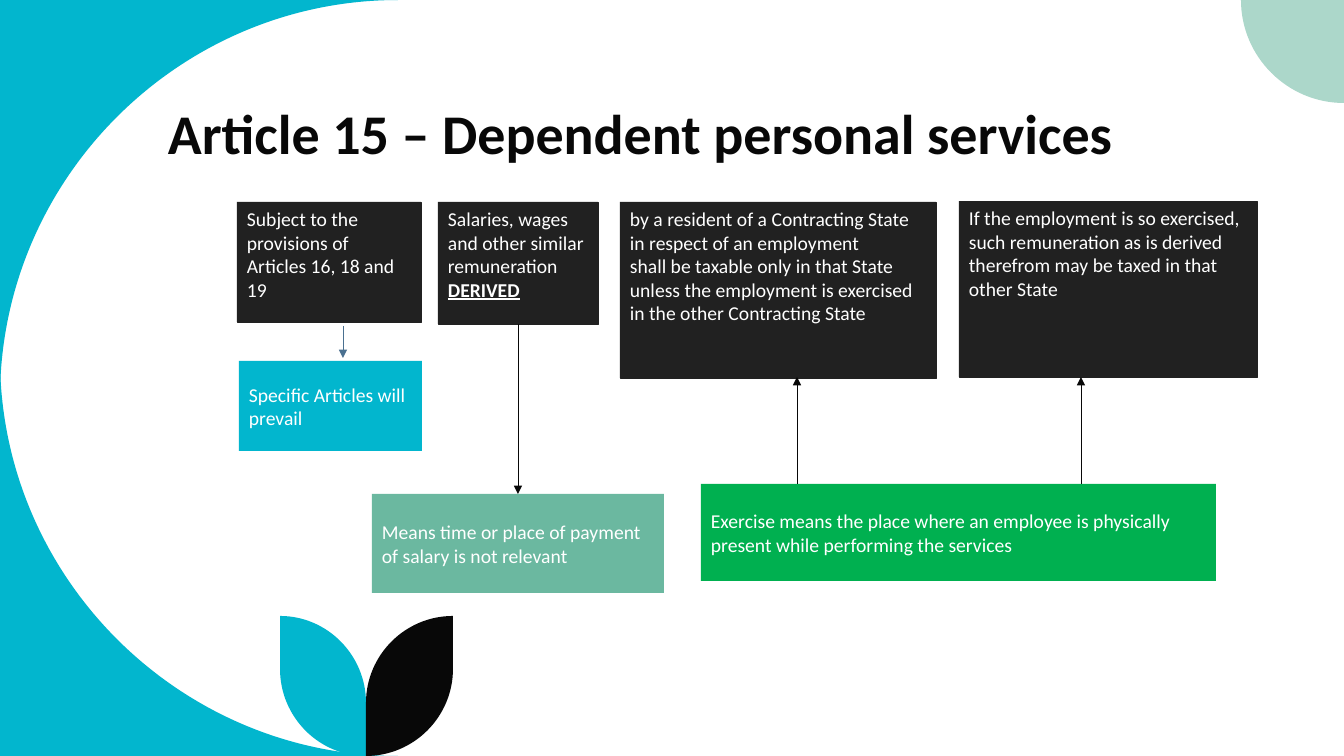
from lxml.etree import SubElement
from pptx import Presentation
from pptx.dml.color import RGBColor
from pptx.enum.shapes import MSO_CONNECTOR as CONNECTOR, MSO_SHAPE as SHAPE
from pptx.enum.text import MSO_ANCHOR as ANCHOR, PP_ALIGN as ALIGN
from pptx.oxml.ns import qn
from pptx.util import Pt

SLIDE_WIDTH, SLIDE_HEIGHT = 1344, 756
PX = 12192000 / SLIDE_WIDTH
ROUNDNESS = 0.55
FONT = "Calibri"
CYAN = RGBColor(0x02, 0xB6, 0xCE)
MINT = RGBColor(0xAC, 0xD7, 0xCA)
SAGE = RGBColor(0x6B, 0xB8, 0xA0)
GREEN = RGBColor(0x00, 0xB0, 0x50)
BLACK = RGBColor(0x08, 0x08, 0x08)
CHARCOAL = RGBColor(0x21, 0x21, 0x21)
STEEL = RGBColor(0x4A, 0x70, 0x90)
WHITE = RGBColor(0xFF, 0xFF, 0xFF)


def emu(*lengths):
    return [round(length * PX) for length in lengths]


def quarter(start, corner, end):
    controls = [
        tuple(p + ROUNDNESS * (c - p) for p, c in zip(point, corner))
        for point in (start, end)
    ]
    return controls + [end]


presentation = Presentation()
presentation.slide_width, presentation.slide_height = emu(SLIDE_WIDTH, SLIDE_HEIGHT)
slide = presentation.slides.add_slide(presentation.slide_layouts[6])
shapes = slide.shapes

decorations = [
    (CYAN, (0, 0), [[(398, 0)], quarter((398, 0), (0, 0), (0, 398))]),
    (CYAN, (0, 756), [[(0, 358)], quarter((0, 358), (0, 756), (398, 756))]),
    (MINT, (1344, 0), [[(1241, 0)], quarter((1241, 0), (1241, 103), (1344, 103))]),
]
for color, outer in ((CYAN, 280), (BLACK, 453)):
    decorations.append((color, (outer, 616), [
        quarter((outer, 616), (366, 616), (366, 703)),
        [(366, 756)],
        quarter((366, 756), (outer, 756), (outer, 669)),
    ]))
for color, start, segments in decorations:
    builder = shapes.build_freeform(*emu(*start))
    builder.add_line_segments([emu(*point) for segment in segments for point in segment])
    shape = builder.convert_to_shape()
    lines = iter(list(shape._element.iter(qn("a:lnTo"))))
    for segment in segments:
        line = next(lines)
        if len(segment) == 3:
            line.tag = qn("a:cubicBezTo")
            curve = SubElement(line.getparent(), qn("a:cubicBezTo"))
            line.addprevious(curve)
            curve.append(line[0])
            line.getparent().remove(line)
            for control in (next(lines), next(lines)):
                curve.append(control[0])
                control.getparent().remove(control)
    shape.shadow.inherit = False
    shape.fill.solid()
    shape.fill.fore_color.rgb = color
    shape.line.fill.background()

title = shapes.add_textbox(*emu(158, 63, 1159, 146))
title.text_frame.word_wrap = True
title.text_frame.vertical_anchor = ANCHOR.MIDDLE
paragraph = title.text_frame.paragraphs[0]
paragraph.text = "Article 15 – Dependent personal services"
paragraph.line_spacing = 0.9
paragraph.font.name = FONT
paragraph.font.size = Pt(40)
paragraph.font.bold = True
paragraph.font.color.rgb = BLACK

boxes = [
    (237, 202, 184, 120, CHARCOAL, ["Subject to the provisions of Articles 16, 18 and 19"]),
    (438, 202, 160, 122, CHARCOAL, ["Salaries, wages and other similar remuneration "]),
    (620, 202, 316, 176, CHARCOAL, [
        "by a resident of a Contracting State in respect of an employment",
        "shall be taxable only in that State unless the employment is exercised "
        "in the other Contracting State",
    ]),
    (959, 201, 298, 176, CHARCOAL, [
        "If the employment is so exercised, such remuneration as is derived",
        "therefrom may be taxed in that other State",
    ]),
    (239, 361, 183, 90, CYAN, ["Specific Articles will prevail"]),
    (372, 494, 292, 99, SAGE, ["Means time or place of payment of salary is not relevant"]),
    (701, 484, 515, 97, GREEN, [
        "Exercise means the place where an employee is physically present "
        "while performing the services",
    ]),
]
for left, top, width, height, color, texts in boxes:
    is_clause = color == CHARCOAL
    box = shapes.add_shape(SHAPE.RECTANGLE, *emu(left, top, width, height))
    box.shadow.inherit = False
    box.fill.solid()
    box.fill.fore_color.rgb = color
    if is_clause:
        box.line.color.rgb = color
        box.line.width = Pt(0.25)
    else:
        box.line.fill.background()
    frame = box.text_frame
    frame.word_wrap = True
    frame.vertical_anchor = ANCHOR.TOP if is_clause else ANCHOR.MIDDLE
    frame.text = "\n".join(texts)
    for paragraph in frame.paragraphs:
        paragraph.alignment = ALIGN.LEFT
        paragraph.font.name = FONT
        paragraph.font.size = Pt(14)
        paragraph.font.color.rgb = WHITE
        if not is_clause:
            paragraph.space_before = paragraph.space_after = Pt(3)
    if texts[0].startswith("Salaries"):
        derived = paragraph.add_run()
        derived.text = "DERIVED"
        derived.font.bold = True
        derived.font.underline = True

arrows = [
    (343, 326, 358, STEEL),
    (518, 324, 494, BLACK),
    (797, 484, 377, BLACK),
    (1081, 484, 377, BLACK),
]
for x, start, end, color in arrows:
    arrow = shapes.add_connector(CONNECTOR.STRAIGHT, *emu(x, start, x, end))
    arrow.line.color.rgb = color
    arrow.line.width = Pt(0.5)
    SubElement(arrow.line._get_or_add_ln(), qn("a:tailEnd"), type="triangle")
    SubElement(arrow._element.spPr, qn("a:effectLst"))

presentation.save("out.pptx")
